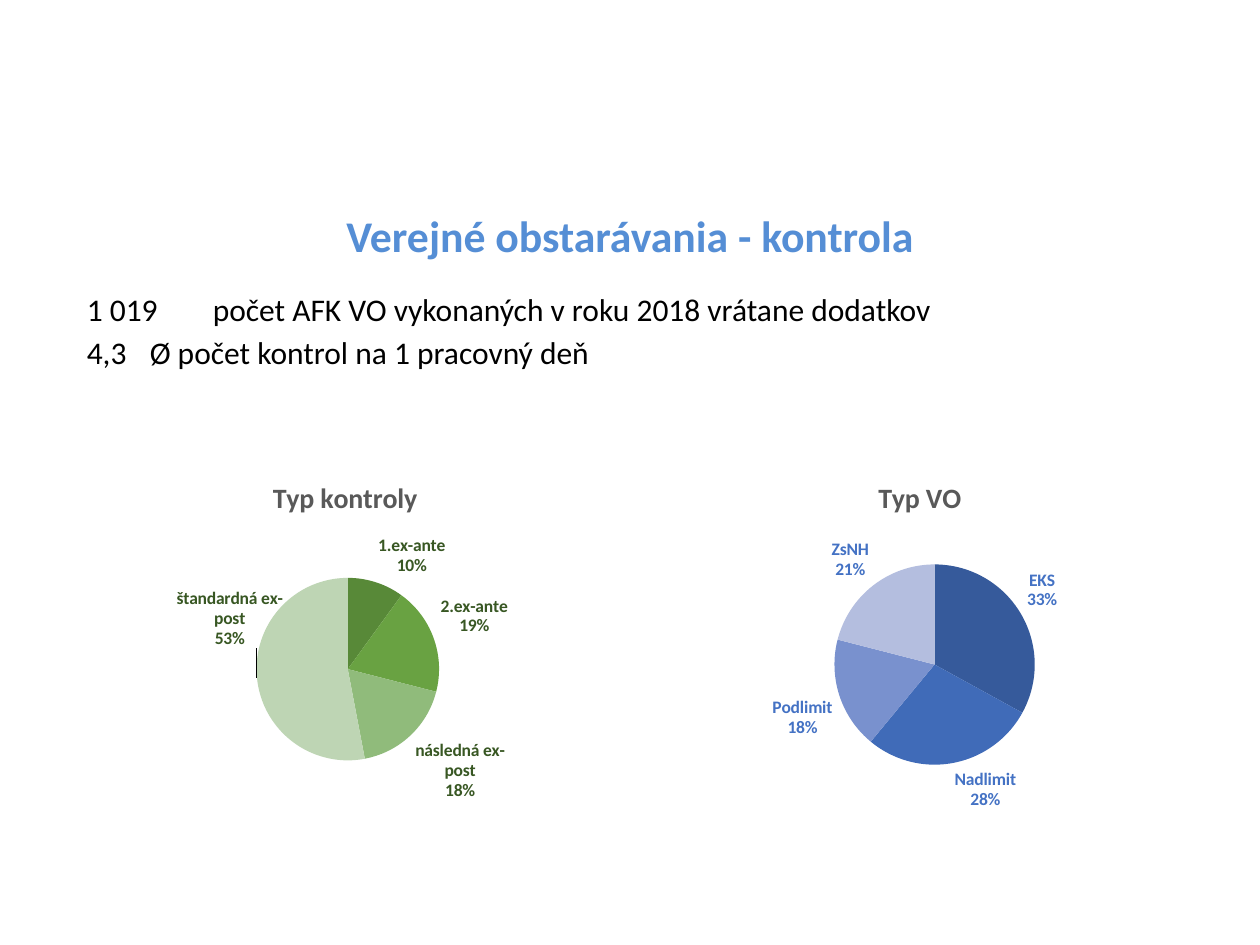
from lxml.etree import SubElement, Element
from pptx import Presentation
from pptx.chart.data import CategoryChartData
from pptx.dml.color import RGBColor
from pptx.enum.chart import XL_CHART_TYPE as ChartType, XL_LABEL_POSITION as LabelPosition
from pptx.enum.text import MSO_ANCHOR as Anchor, PP_ALIGN as Align
from pptx.oxml.ns import qn
from pptx.util import Inches, Pt

FONT = "Calibri"
HEADING = "Verejné obstarávania - kontrola"
FACTS = [
    ("1 019", "počet AFK VO vykonaných v roku 2018 vrátane dodatkov"),
    ("4,3", "Ø počet kontrol na 1 pracovný deň"),
]
CHARTS = [
    {
        "title": "Typ kontroly",
        "box": (0.5, 3.58, 4.39, 2.96),
        "title_at": {"x": 0.37, "y": 0.06},
        "plot_at": {"x": 0.35, "y": 0.34, "w": 0.33, "h": 0.49},
        "label_color": "385723",
        "slices": [
            ("1.ex-ante", 10, "588938"),
            ("2.ex-ante", 19, "69A242"),
            ("následná ex-post", 18, "90BB7B"),
            ("štandardná ex-post", 53, "BED5B4"),
        ],
        "moved_labels": {3: {"x": 0.06, "y": -0.24}},
    },
    {
        "title": "Typ VO",
        "box": (5.07, 3.58, 4.43, 3),
        "title_at": {"x": 0.42, "y": 0.06},
        "plot_at": {"x": 0.35, "y": 0.3, "w": 0.36, "h": 0.53},
        "label_color": "4472C4",
        "slices": [
            ("EKS", 33, "365A9B"),
            ("Nadlimit", 28, "406BB8"),
            ("Podlimit", 18, "7991CE"),
            ("ZsNH", 21, "B4BEDF"),
        ],
        "moved_labels": {},
    },
]


def rgb(value):
    return RGBColor.from_string(value)


def format_font(font, size, color, bold=False):
    values = {"name": FONT, "size": Pt(size), "bold": bold}
    for name, value in values.items():
        setattr(font, name, value)
    font.color.rgb = rgb(color)


def add_text(slide, box, lines, size, color, bold=False, align=Align.LEFT, anchor=Anchor.TOP):
    frame = slide.shapes.add_textbox(*map(Inches, box)).text_frame
    frame.word_wrap = True
    frame.vertical_anchor = anchor
    for index, line in enumerate(lines):
        paragraph = frame.paragraphs[0] if index == 0 else frame.add_paragraph()
        paragraph.alignment = align
        if index:
            paragraph.space_before = Pt(3.2)
        run = paragraph.add_run()
        run.text = line
        format_font(run.font, size, color, bold)


def place(parent, previous_tag, position, inner=False):
    for old in parent.findall(qn("c:layout")):
        parent.remove(old)
    layout = Element(qn("c:layout"))
    manual = SubElement(layout, qn("c:manualLayout"))
    if inner:
        SubElement(manual, qn("c:layoutTarget"), val="inner")
    if "w" in position or previous_tag == "c:tx":
        for mode in ("xMode", "yMode"):
            SubElement(manual, qn(f"c:{mode}"), val="edge")
    for name, value in position.items():
        SubElement(manual, qn(f"c:{name}"), val=str(value))
    previous = parent.find(qn(previous_tag)) if previous_tag else None
    if previous is None:
        parent.insert(0, layout)
    else:
        previous.addnext(layout)


def separate_lines(labels):
    separator = Element(qn("c:separator"))
    separator.text = "\n"
    labels.find(qn("c:showBubbleSize")).addnext(separator)


def add_pie(slide, content):
    names, values, colors = zip(*content["slices"])
    data = CategoryChartData()
    data.categories = names
    data.add_series("Series 1", values)
    frame = slide.shapes.add_chart(ChartType.PIE, *map(Inches, content["box"]), data)
    chart = frame.chart
    chart.has_legend = False
    format_font(chart.font, 10, "000000")

    chart.has_title = True
    title_frame = chart.chart_title.text_frame
    title_frame.text = content["title"]
    format_font(title_frame.paragraphs[0].runs[0].font, 16, "595959", True)
    chart_element = chart.element.find(qn("c:chart"))
    place(chart_element.find(qn("c:title")), "c:tx", content["title_at"])
    place(chart_element.find(qn("c:plotArea")), None, content["plot_at"], inner=True)

    plot = chart.plots[0]
    plot.vary_by_categories = True
    series = plot.series[0]
    for index, color in enumerate(colors):
        fill = series.points[index].format.fill
        fill.solid()
        fill.fore_color.rgb = rgb(color)

    labels = series.data_labels
    flags = {
        "show_value": False,
        "show_category_name": True,
        "show_percentage": True,
        "position": LabelPosition.OUTSIDE_END,
    }
    for name, value in flags.items():
        setattr(labels, name, value)
    format_font(labels.font, 10, content["label_color"], True)
    labels_element = series.data_labels.font and series.points and chart.element.find(".//" + qn("c:dLbls"))
    separate_lines(labels_element)

    for index, offset in content["moved_labels"].items():
        label = series.points[index].data_label
        label.position = LabelPosition.OUTSIDE_END
        format_font(label.font, 10, content["label_color"], True)
        element = labels_element.find(qn("c:dLbl"))
        for name, value in {"showVal": "0", "showCatName": "1", "showPercent": "1"}.items():
            element.find(qn(f"c:{name}")).set("val", value)
        separate_lines(element)
        place(element, "c:idx", offset)


def main():
    presentation = Presentation()
    presentation.slide_width = Inches(10)
    presentation.slide_height = Inches(7.5)
    slide = presentation.slides.add_slide(presentation.slide_layouts[6])
    add_text(slide, (0.5, 1.47, 9, 0.79), [HEADING], 25, "558ED5", True, Align.CENTER, Anchor.MIDDLE)
    for content in CHARTS:
        add_pie(slide, content)
    add_text(slide, (0.59, 2.25, 8.91, 1.33), ["\t".join(fact) for fact in FACTS], 18, "000000")
    presentation.save("out.pptx")


if __name__ == "__main__":
    main()
